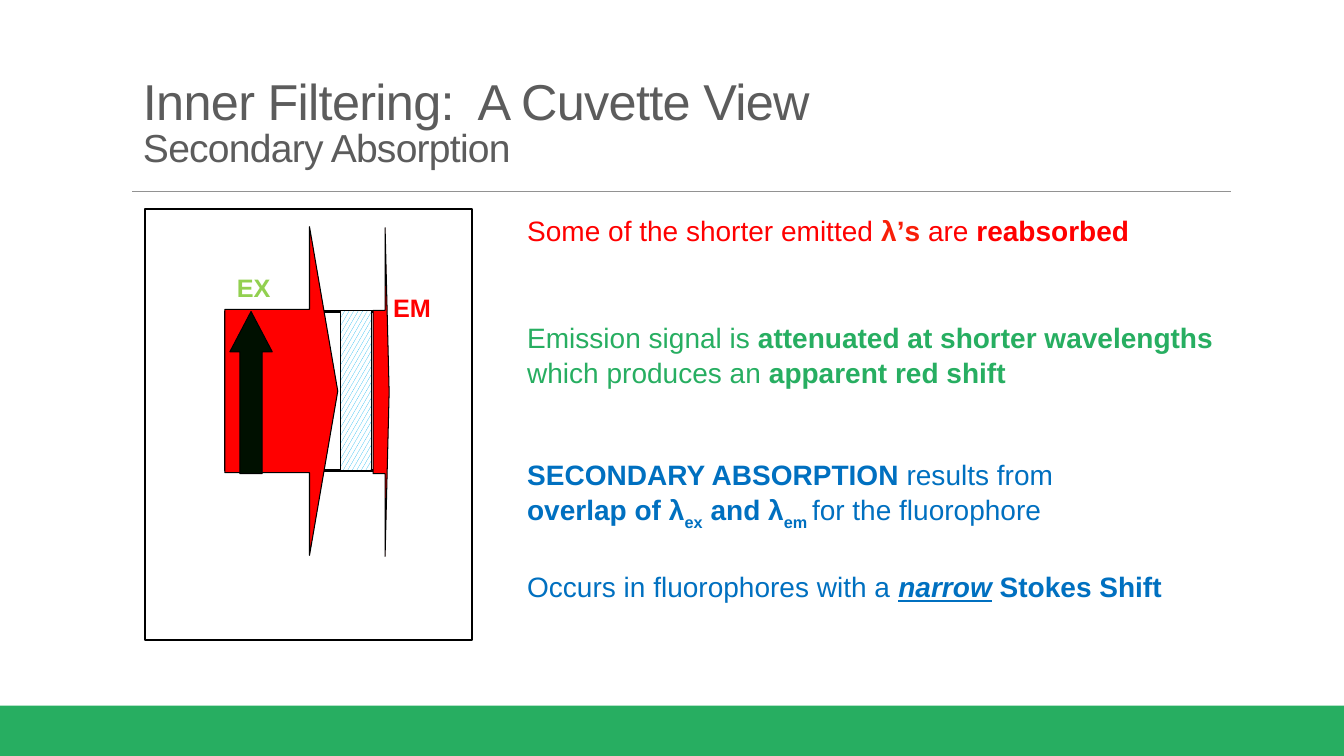
from lxml import etree
from pptx import Presentation
from pptx.dml.color import RGBColor
from pptx.enum.dml import MSO_PATTERN
from pptx.enum.shapes import MSO_CONNECTOR, MSO_SHAPE
from pptx.enum.text import MSO_ANCHOR
from pptx.oxml.ns import qn
from pptx.util import Inches, Pt

COLORS = {"green": "27AE61", "rule": "929292", "title": "5C5C5C", "red": "FF0000",
          "orange": "F81F08", "blue": "0070C0", "lime": "92D050", "dark": "001000",
          "cyan": "00B0F0", "black": "000000", "white": "FFFFFF"}

# Content: each paragraph is (space before, colour, runs); a run is (text, format)
BOLD = {"bold": True}
SUB = {"bold": True, "baseline": -25}
TITLE = [(0, "title", [("Inner Filtering:  A Cuvette View", {"size": 36, "spacing": -50}),
                       ("\n", {}),
                       ("Secondary Absorption", {"size": 27.9, "spacing": -50})])]
POINTS = [
    (0, "red", [("Some of the shorter emitted ", {}),
                ("λ’s ", {"bold": True, "color": "orange"}),
                ("are ", {}), ("reabsorbed", BOLD)]),
    (52.5, "green", [("Emission signal is ", {}),
                     ("attenuated at shorter wavelengths", BOLD)]),
    (1, "green", [("which produces an ", {}), ("apparent red shift", BOLD)]),
    (49, "blue", [("SECONDARY ABSORPTION ", BOLD), ("results from", {})]),
    (1, "blue", [("overlap of λ", BOLD), ("ex", SUB), (" and λ", BOLD), ("em ", SUB),
                 ("for the fluorophore", {})]),
    (27.5, "blue", [("Occurs in fluorophores with a ", {}),
                    ("narrow", {"bold": True, "italic": True, "underline": True}),
                    (" Stokes Shift", BOLD)]),
]
LABELS = [("EX", "lime", 2.25, 2.65), ("EM", "red", 3.8, 2.85)]
# Arrows: tail, neck and tip along the axis, axis centre, half widths of body and head
ARROWS = [
    {"along": (3.7, 3.82, 3.86), "centre": 3.89, "halves": (0.81, 1.63), "fill": "red"},
    {"along": (2.23, 3.07, 3.35), "centre": 3.88, "halves": (0.81, 1.63), "fill": "red"},
    {"along": (4.7, 3.49, 3.09), "centre": 2.49, "halves": (0.11, 0.21), "fill": "dark",
     "upward": True},
]

prs = Presentation()
prs.slide_width, prs.slide_height = Inches(13.33), Inches(7.5)
slide = prs.slides.add_slide(prs.slide_layouts[6])
shapes = slide.shapes


def rgb(name):
    return RGBColor.from_string(COLORS[name])


def paint(shape, fill=None, line=None, weight=0.75):
    shape.shadow.inherit = False
    if fill:
        shape.fill.solid()
        shape.fill.fore_color.rgb = rgb(fill)
    else:
        shape.fill.background()
    if line:
        shape.line.color.rgb = rgb(line)
        shape.line.width = Pt(weight)
    else:
        shape.line.fill.background()
    return shape


def rect(left, top, width, height, **look):
    box = shapes.add_shape(MSO_SHAPE.RECTANGLE, *map(Inches, (left, top, width, height)))
    return paint(box, **look)


def add_run(paragraph, text, size=20, color="black", bold=False, italic=False,
            underline=False, baseline=0, spacing=0):
    run = paragraph.add_run()
    run.text = text
    font = run.font
    font.name, font.size, font.color.rgb = "Arial", Pt(size), rgb(color)
    font.bold, font.italic, font.underline = bold, italic, underline
    properties = run._r.get_or_add_rPr()
    if baseline:
        properties.set("baseline", str(baseline * 1000))
    if spacing:
        properties.set("spc", str(spacing))


def add_text(paragraphs, at, anchor=MSO_ANCHOR.TOP, line_spacing=None):
    frame = shapes.add_textbox(*map(Inches, at)).text_frame
    frame.word_wrap, frame.vertical_anchor = True, anchor
    for index, (before, color, runs) in enumerate(paragraphs):
        paragraph = frame.add_paragraph() if index else frame.paragraphs[0]
        if before:
            paragraph.space_before = Pt(before)
        if line_spacing:
            paragraph.line_spacing = line_spacing
        for text, style in runs:
            if text == "\n":
                paragraph.add_line_break()
            else:
                add_run(paragraph, text, **{"color": color, **style})


def add_arrow(along, centre, halves, fill, upward=False):
    tail, neck, tip = along
    body, head = halves
    outline = [(tail, -body), (neck, -body), (neck, -head), (tip, 0),
               (neck, head), (neck, body), (tail, body)]
    corners = [(centre + off, pos) if upward else (pos, centre + off)
               for pos, off in outline]
    corners = [(Inches(x), Inches(y)) for x, y in corners]
    builder = shapes.build_freeform(*corners[0])
    builder.add_line_segments(corners[1:], close=True)
    paint(builder.convert_to_shape(), fill=fill, line="black")


# Footer band and rule under the title
rect(0, 7, 13.33, 0.5, fill="green")
rule = shapes.add_connector(MSO_CONNECTOR.STRAIGHT,
                            *map(Inches, (1.31, 1.9, 12.21, 1.9)))
rule.line.color.rgb, rule.line.width = rgb("rule"), Pt(0.5)
etree.SubElement(rule._element.spPr, qn("a:effectLst"))

# Title and explanation
add_text(TITLE, (1.32, 0.68, 8.94, 1.06), anchor=MSO_ANCHOR.BOTTOM, line_spacing=0.85)
add_text(POINTS, (5.13, 2.07, 7.29, 4.28))

# Cuvette with its absorbing layer
rect(1.44, 2.07, 3.24, 4.28, line="black", weight=1.5)
rect(2.24, 3.09, 1.5, 1.58, fill="white", line="black", weight=2.25)
layer = rect(2.74, 3.72, 1.58, 0.31, line="black")
layer.rotation = 90
layer.fill.patterned()
layer.fill.pattern = MSO_PATTERN.LARGE_CONFETTI
layer.fill.fore_color.rgb, layer.fill.back_color.rgb = rgb("cyan"), rgb("white")

# Light arrows and their labels
for arrow in ARROWS:
    add_arrow(**arrow)
for label, color, left, top in LABELS:
    add_text([(0, color, [(label, {"size": 18, "bold": True})])], (left, top, 0.75, 0.4))

prs.save("out.pptx")
